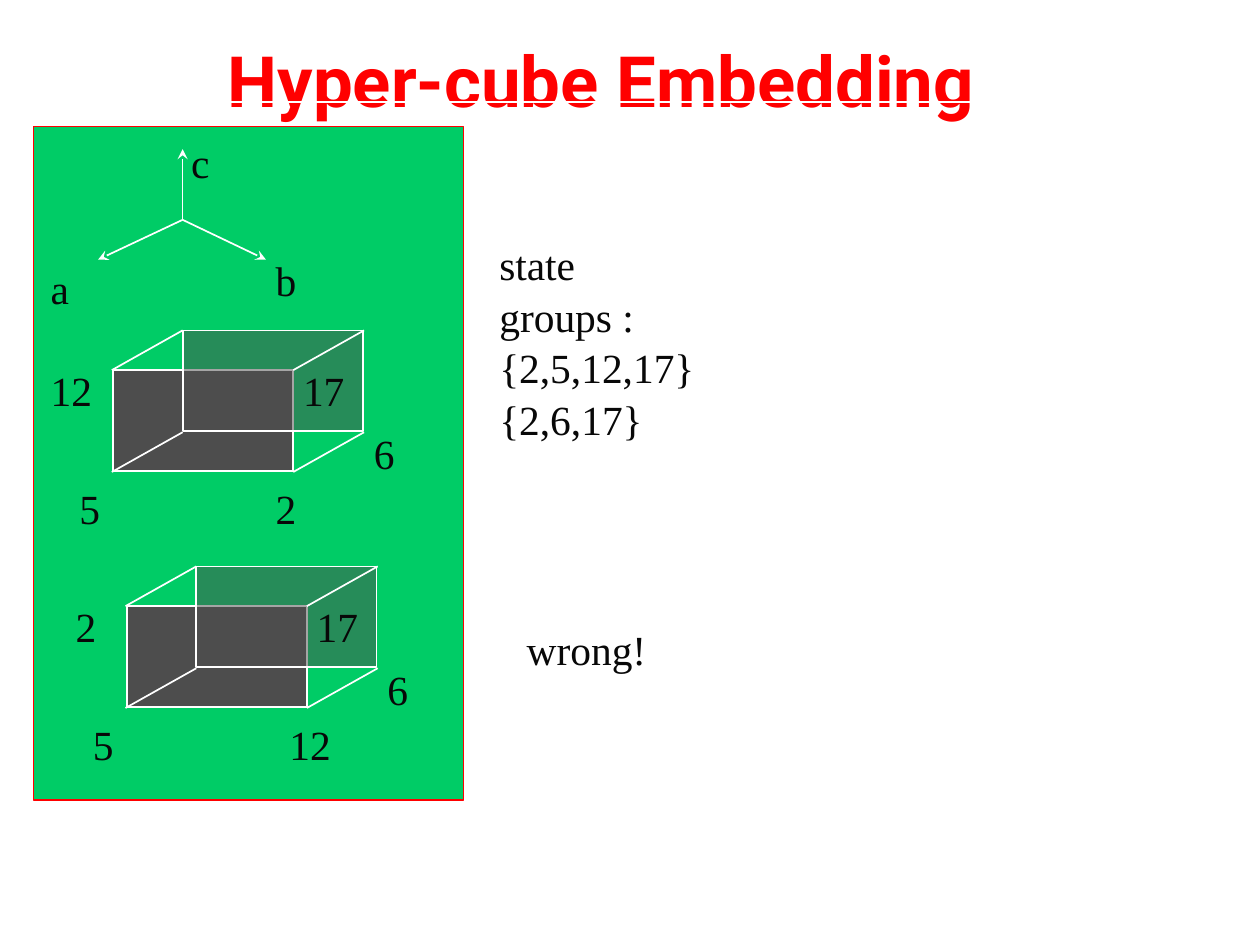
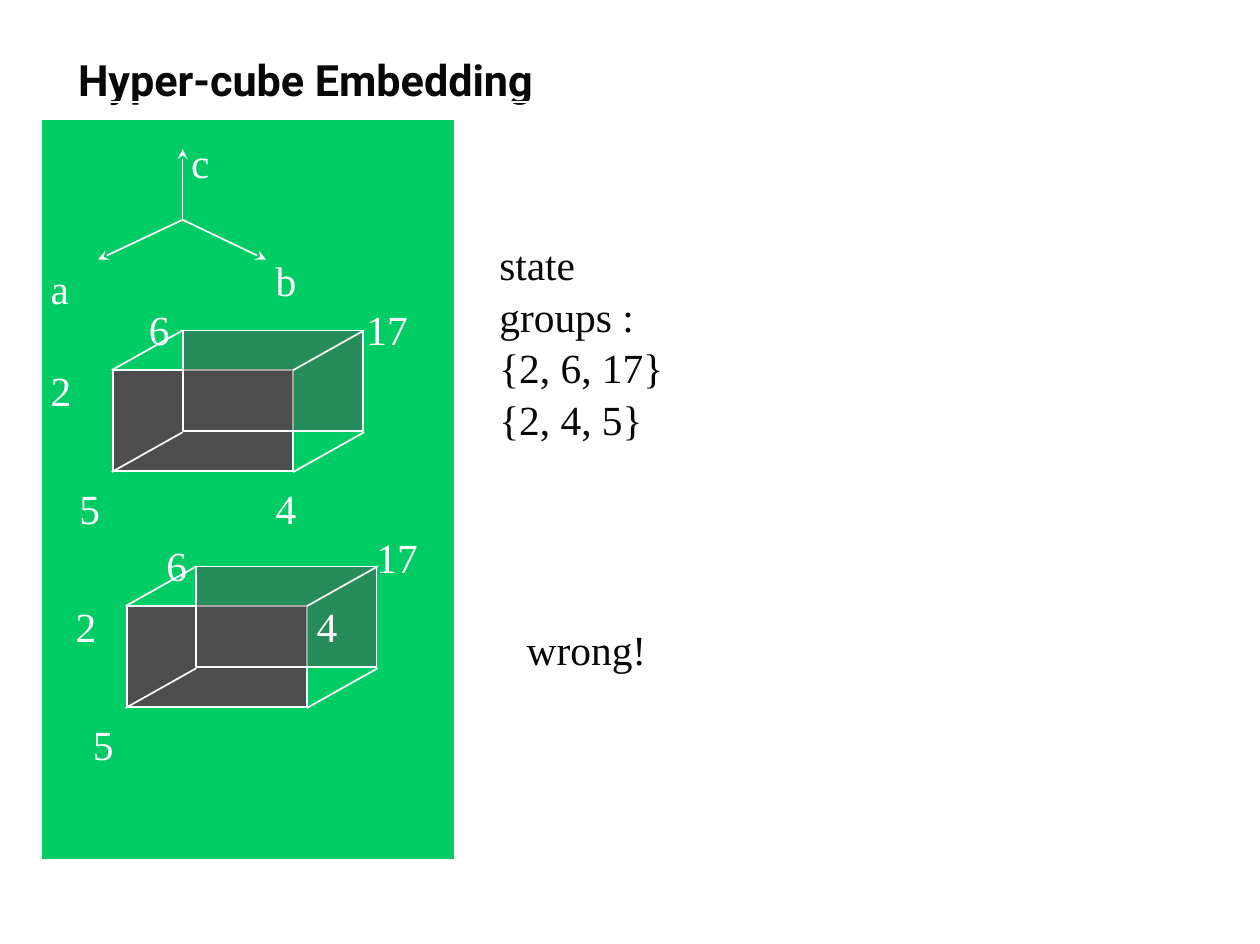
from lxml import etree
from pptx import Presentation
from pptx.dml.color import RGBColor
from pptx.enum.shapes import MSO_CONNECTOR as CONNECTOR, MSO_SHAPE as SHAPE
from pptx.enum.text import MSO_ANCHOR as ANCHOR, PP_ALIGN as ALIGN
from pptx.oxml.ns import qn
from pptx.util import Inches, Pt

COLORS = {"red": "FF0000", "green": "00CC66", "gray": "4D4D4D",
          "black": "080808", "white": "FFFFFF"}

# Axes and cube geometry, in inches
ORIGIN = (1.47, 1.77)
AXES = {  # name: (arrow tip, label position)
    "c": ((1.47, 1.2), (1.44, 1.02)),
    "a": ((0.79, 2.09), (0.31, 2.03)),
    "b": ((2.14, 2.09), (2.12, 1.97)),
}
CUBE_STEP = (0.11, 1.9)
FACE = (1.45, 0.81)
FRONT, BACK = (0.91, 2.98), (1.47, 2.66)
EDGE_STARTS = [(x, y) for y in (2.66, 3.48) for x in (1.47, 2.93)]
EDGE = (-0.57, 0.32)
CORNERS = {
    "front bottom right": (2.12, 3.8),
    "front bottom left": (0.54, 3.8),
    "front top left": (0.31, 2.85),
    "front top right": (2.34, 2.85),
    "back bottom right": (2.91, 3.36),
    "back top left": (1.1, 2.36),
    "back top right": (2.85, 2.36),
}

# Each cube lists its corner labels: corner, text, nudge
SLIDES = [
    {
        "title": (41, "red", ALIGN.CENTER),
        "panel": (0.27, 1.02, 3.46, 5.42), "border": "red", "labels": "black",
        "groups": ["{2,5,12,17}", "{2,6,17}"],
        "cubes": [
            [("front bottom right", "2", (0, 0)),
             ("front bottom left", "5", (0, 0)),
             ("back bottom right", "6", (0, 0)),
             ("front top left", "12", (0, 0)),
             ("front top right", "17", (0, 0))],
            [("front bottom right", "12", (0, 0)),
             ("front bottom left", "5", (0, 0)),
             ("back bottom right", "6", (0, 0)),
             ("front top left", "2", (0.09, 0)),
             ("front top right", "17", (0, 0))],
        ],
    },
    {
        "title": (25, "black", ALIGN.LEFT),
        "panel": (0.33, 0.96, 3.33, 5.96), "border": "white", "labels": "white",
        "groups": ["{2, 6, 17}", "{2, 4, 5}"],
        "cubes": [
            [("front bottom right", "4", (0, 0)),
             ("front bottom left", "5", (0, 0)),
             ("front top left", "2", (0, 0)),
             ("back top left", "6", (0, 0)),
             ("back top right", "17", (0, 0))],
            [("front bottom left", "5", (0, 0)),
             ("front top left", "2", (0.09, 0)),
             ("front top right", "4", (0, 0)),
             ("back top left", "6", (0.03, 0)),
             ("back top right", "17", (-0.03, -0.06))],
        ],
    },
]

presentation = Presentation()
presentation.slide_width = Inches(10.14)
presentation.slide_height = Inches(7.6)


def add_text(slide, box, lines, color, size=24, font="Times New Roman"):
    shape = slide.shapes.add_textbox(*map(Inches, box))
    frame = shape.text_frame
    frame.word_wrap = True
    frame.text = "\n".join(lines)
    for paragraph in frame.paragraphs:
        paragraph.font.size = Pt(size)
        paragraph.font.name = font
        paragraph.font.color.rgb = RGBColor.from_string(COLORS[color])
        if size == 24:
            paragraph.line_spacing = 1.04
            frame.margin_top = Inches(0.07)
    return frame


def add_line(slide, start, end, arrow=False):
    line = slide.shapes.add_connector(
        CONNECTOR.STRAIGHT, *map(Inches, (*start, *end)))
    line.line.color.rgb = RGBColor.from_string(COLORS["white"])
    line.line.width = Pt(1)
    properties = line._element.spPr
    if arrow:
        etree.SubElement(properties.find(qn("a:ln")), qn("a:tailEnd"), type="stealth")
    etree.SubElement(properties, qn("a:effectLst"))


for content in SLIDES:
    slide = presentation.slides.add_slide(presentation.slide_layouts[6])

    # Green panel and the faces of both cubes
    faces = [(*content["panel"], "green", content["border"], 0.75, None)]
    offsets = [(step * CUBE_STEP[0], step * CUBE_STEP[1]) for step in range(2)]
    for dx, dy in offsets:
        for (x, y), alpha in ((FRONT, None), (BACK, 50000)):
            faces.append((x + dx, y + dy, *FACE, "gray", "white", 1, alpha))
    for *box, fill, border, width, alpha in faces:
        shape = slide.shapes.add_shape(SHAPE.RECTANGLE, *map(Inches, box))
        shape.shadow.inherit = False
        shape.fill.solid()
        shape.fill.fore_color.rgb = RGBColor.from_string(COLORS[fill])
        shape.line.color.rgb = RGBColor.from_string(COLORS[border])
        shape.line.width = Pt(width)
        if alpha:
            color = shape._element.spPr.find(qn("a:solidFill"))[0]
            etree.SubElement(color, qn("a:alpha"), val=str(alpha))

    # Title with the white rule across it
    size, color, alignment = content["title"]
    title = add_text(slide, (0.53, 0, 8.62, 1.27), ["Hyper-cube Embedding"],
                     color, size, "Roboto")
    title.vertical_anchor = ANCHOR.MIDDLE
    title.paragraphs[0].alignment = alignment
    title.paragraphs[0].font.bold = True
    add_line(slide, (0.45, 0.82), (9.35, 0.82))

    # Axes
    for name, (tip, place) in AXES.items():
        add_line(slide, ORIGIN, tip, arrow=True)
        add_text(slide, (*place, 0.72, 0.5), [name], content["labels"])

    # Cube edges and corner labels
    for (dx, dy), labels in zip(offsets, content["cubes"]):
        for x, y in EDGE_STARTS:
            start = (x + dx, y + dy)
            add_line(slide, start, (start[0] + EDGE[0], start[1] + EDGE[1]))
        for corner, text, nudge in labels:
            x, y = CORNERS[corner]
            add_text(slide, (x + dx + nudge[0], y + dy + nudge[1], 0.72, 0.5),
                     [text], content["labels"])

    # State groups and verdict
    add_text(slide, (3.92, 1.84, 1.9, 1.7), ["state groups :", *content["groups"]], "black")
    add_text(slide, (4.14, 4.94, 1.3, 0.5), ["wrong!"], "black")

presentation.save("out.pptx")
